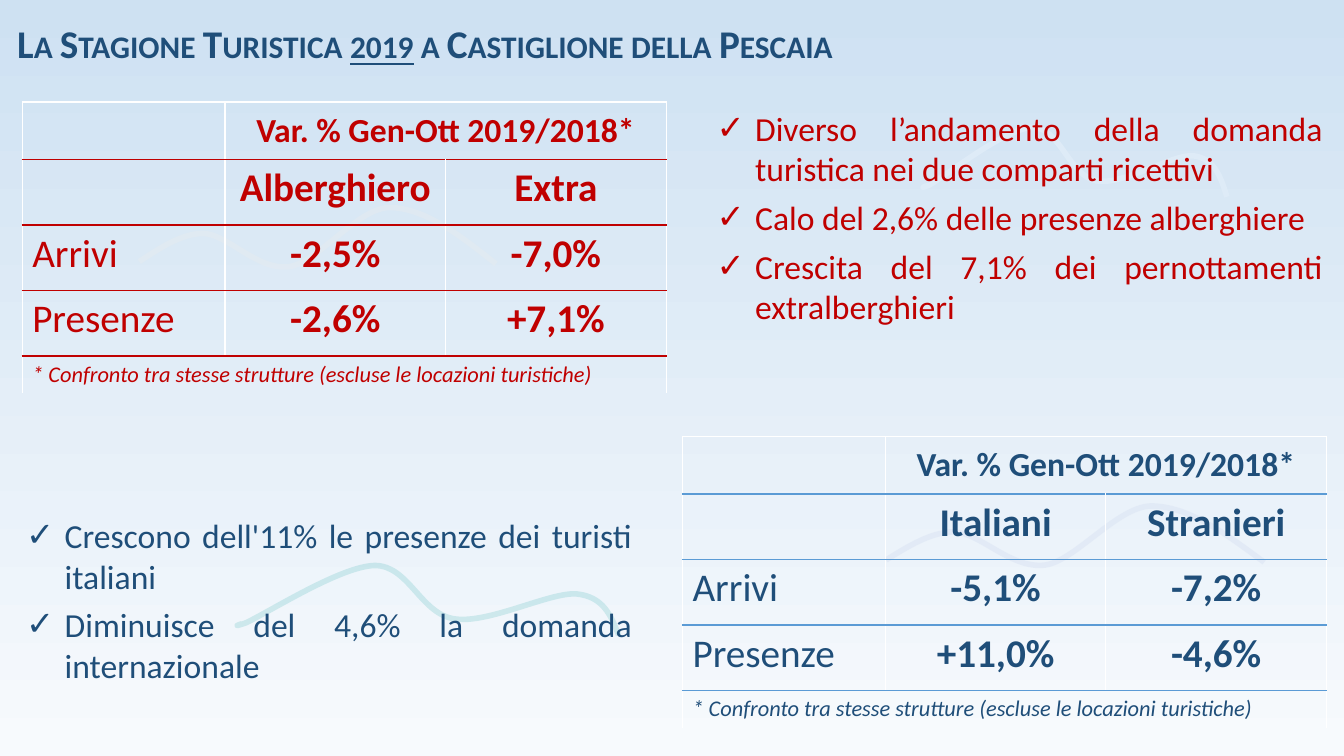
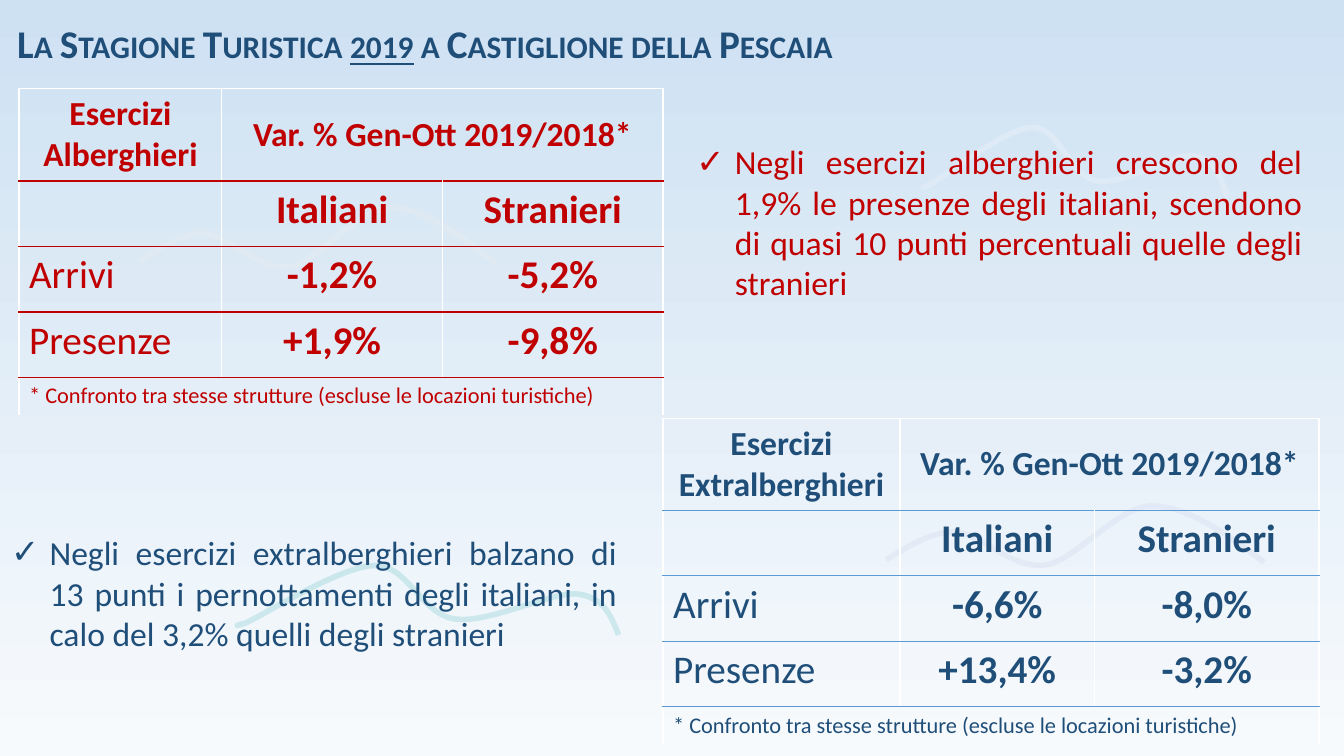
from lxml.etree import SubElement
from pptx import Presentation
from pptx.dml.color import RGBColor
from pptx.enum.text import MSO_ANCHOR, MSO_AUTO_SIZE, PP_ALIGN
from pptx.oxml.ns import qn
from pptx.oxml.xmlchemy import OxmlElement
from pptx.util import Cm, Pt

RED = RGBColor(0xC0, 0x00, 0x00)
NAVY = RGBColor(0x1F, 0x4E, 0x79)
BLUE = RGBColor(0x5B, 0x9B, 0xD5)
WHITE = RGBColor(0xFF, 0xFF, 0xFF)
SKY_TOP = RGBColor(0xCE, 0xE1, 0xF2)
SKY_BOTTOM = RGBColor(0xF7, 0xFA, 0xFD)
GREY_WAVE = RGBColor(0xED, 0xED, 0xED)
LILAC_WAVE = RGBColor(0xDA, 0xE3, 0xF3)
TEAL_WAVE = RGBColor(0x00, 0x99, 0x99)
PALE_WAVE = RGBColor(0xDE, 0xEB, 0xF7)

FONT = "Calibri"
TITLE_RUNS = ["La Stagione Turistica ", "2019", " a Castiglione della Pescaia"]
PERIOD = "Var. % Gen-Ott 2019/2018*"
FOOTNOTE = "* Confronto tra stesse strutture (escluse le locazioni turistiche)"

EQUAL_COLUMNS = (5.11, 5.56, 5.56)
WIDE_FIRST_COLUMN = (5.97, 4.9, 5.66)
BODY_ROW, FOOTNOTE_ROW = 1.65, 0.92
LIST_WIDTH, LIST_INDENT = 15.47, 0.97

# Bezier points as fractions of the wave's width and height
DOUBLE_CREST = [
    (0, 0.96), (0.06, 0.71), (0.12, 0.46), (0.18, 0.46), (0.25, 0.48),
    (0.33, 1.12), (0.42, 1.05), (0.5, 0.98), (0.61, 0.02), (0.7, 0),
    (0.8, 0), (0.9, 0.5), (1, 1)]
FALLING_CREST = [
    (0.01, 0.84), (-0.02, 0.9), (0.02, 0.83), (0.02, 0.83), (0.08, 0.68),
    (0.27, 0.01), (0.36, 0), (0.45, 0), (0.48, 0.7), (0.57, 0.77),
    (0.66, 0.84), (0.82, 0.38), (0.89, 0.41), (0.96, 0.45), (0.98, 0.72),
    (1, 1)]
WAVES = [  # outline, left, top, width, height, colour, opacity %
    (DOUBLE_CREST, 3.51, 5.23, 8.99, 1.42, GREY_WAVE, 30),
    (DOUBLE_CREST, 22.33, 12.75, 9.53, 1.42, LILAC_WAVE, 50),
    (FALLING_CREST, 5.99, 14.25, 9.6, 1.75, TEAL_WAVE, 15),
    (FALLING_CREST, 23.27, 3.21, 7.65, 1.75, PALE_WAVE, 100),
]


def style_font(font, size, color, bold=False, italic=False):
    font.name = FONT
    font.size = Pt(size)
    font.bold = bold
    font.italic = italic
    font.color.rgb = color


def curve_outline(wave):
    """Turn each three straight segments into one cubic Bezier curve."""
    outline = next(wave.element.iter(qn("a:path")))
    segments = outline.findall(qn("a:lnTo"))
    for start in range(0, len(segments), 3):
        curve = SubElement(outline, qn("a:cubicBezTo"))
        for segment in segments[start:start + 3]:
            curve.append(segment[0])
            outline.remove(segment)


def add_wave(slide, points, left, top, width, height, color, opacity):
    corners = [(Cm(left + x * width), Cm(top + y * height)) for x, y in points]
    builder = slide.shapes.build_freeform(*corners[0])
    builder.add_line_segments(corners[1:], close=False)
    wave = builder.convert_to_shape()
    curve_outline(wave)
    wave.shadow.inherit = False
    wave.fill.background()
    wave.line.color.rgb = color
    wave.line.width = Pt(4)
    color_node = next(wave.line._ln.iter(qn("a:srgbClr")))
    SubElement(color_node, qn("a:alpha"), val=str(opacity * 1000))
    return wave


def style_master(deck, slide):
    """Give the master its background and waves, drawn by way of a slide."""
    master = deck.slide_master
    fill = master.background.fill
    fill.gradient()
    fill.gradient_angle = 90
    for stop, color in zip(fill.gradient_stops, (SKY_BOTTOM, SKY_TOP)):
        stop.color.rgb = color
    for wave in WAVES:
        master.element.cSld.spTree.append(add_wave(slide, *wave).element)


def place(shape, left, top, width, height):
    shape.left, shape.top = Cm(left), Cm(top)
    shape.width, shape.height = Cm(width), Cm(height)


def style_layout_title(layout):
    title = layout.placeholders[0]
    place(title, 0.18, 0.36, 22.63, 1.45)
    title.text_frame.auto_size = MSO_AUTO_SIZE.NONE
    title.text_frame.vertical_anchor = MSO_ANCHOR.MIDDLE


def fill_title(slide):
    para = slide.shapes.title.text_frame.paragraphs[0]
    para.alignment = PP_ALIGN.LEFT
    for text in TITLE_RUNS:
        run = para.add_run()
        run.text = text
        style_font(run.font, 28, NAVY, bold=True)
        run.font.underline = text == "2019"
        run.font._element.set("cap", "small")


def fill_checklist(box, left, top, height, color, items):
    place(box, left, top, LIST_WIDTH, height)
    frame = box.text_frame
    frame.text = "\n".join(items)
    frame.auto_size = MSO_AUTO_SIZE.NONE
    frame.vertical_anchor = MSO_ANCHOR.TOP
    frame.margin_left = frame.margin_right = Cm(0.1)
    frame.margin_top = frame.margin_bottom = Cm(0.13)
    for para in frame.paragraphs:
        para.alignment = PP_ALIGN.JUSTIFY
        para.space_before, para.space_after = Pt(0), Pt(6)
        style_font(para.runs[0].font, 24, color)
        properties = para._p.get_or_add_pPr()
        properties.set("marL", str(Cm(LIST_INDENT)))
        properties.set("indent", str(-Cm(LIST_INDENT)))
        SubElement(properties, qn("a:buChar"), char="✓")


def set_borders(cell, top, bottom):
    """Draw white sides, and top and bottom in a colour or not at all."""
    properties = cell._tc.get_or_add_tcPr()
    sides = {"a:lnL": WHITE, "a:lnR": WHITE, "a:lnT": top, "a:lnB": bottom}
    for position, (tag, color) in enumerate(sides.items()):
        line = OxmlElement(tag)
        line.set("w", str(Pt(1)))
        if color is None:
            SubElement(line, qn("a:noFill"))
        else:
            solid = SubElement(line, qn("a:solidFill"))
            SubElement(solid, qn("a:srgbClr"), val=str(color))
        properties.insert(position, line)


def fill_cell(cell, text, size, color, bold, italic, alignment):
    cell.text = text
    para = cell.text_frame.paragraphs[0]
    para.alignment = alignment
    for run in para.runs:
        style_font(run.font, size, color, bold, italic)


def add_variation_table(slide, left, top, columns, first_row, color, rule,
                        corner, headings, arrivals, nights, italic_note):
    texts = [
        [corner, PERIOD, ""],
        ["", *headings],
        ["Arrivi", *arrivals],
        ["Presenze", *nights],
        [FOOTNOTE, "", ""],
    ]
    heights = [first_row, BODY_ROW, BODY_ROW, BODY_ROW, FOOTNOTE_ROW]
    sizes = [24, 28, 28, 28, 16]
    last = len(texts) - 1
    table = slide.shapes.add_table(
        len(texts), len(columns), Cm(left), Cm(top),
        Cm(sum(columns)), Cm(sum(heights))).table
    table.first_row = table.horz_banding = False
    for column, width in zip(table.columns, columns):
        column.width = Cm(width)
    for index, row in enumerate(table.rows):
        row.height = Cm(heights[index])
        for position, cell in enumerate(row.cells):
            is_label = index > 1 and position == 0
            fill_cell(cell, texts[index][position], sizes[index], color,
                      bold=not is_label,
                      italic=italic_note and index == last,
                      alignment=PP_ALIGN.LEFT if is_label else PP_ALIGN.CENTER)
            if index == 0:
                cell.vertical_anchor = MSO_ANCHOR.MIDDLE
            cell.fill.background()
            set_borders(cell, WHITE if index == 0 else rule,
                        None if index == last else rule)
    table.cell(0, 1).merge(table.cell(0, 2))
    table.cell(last, 0).merge(table.cell(last, 2))


def fill_sector_slide(slide):
    """Hotels against other lodgings, then Italians against foreigners."""
    upper, lower = slide.placeholders[1], slide.placeholders[2]
    add_variation_table(
        slide, 0.56, 2.57, EQUAL_COLUMNS, 1.45, RED, RED, "",
        ("Alberghiero", "Extra"), ("-2,5%", "-7,0%"), ("-2,6%", "+7,1%"),
        italic_note=True)
    fill_checklist(upper, 17.96, 2.59, 5.82, RED, [
        "Diverso l’andamento della domanda turistica nei due comparti ricettivi",
        "Calo del 2,6% delle presenze alberghiere",
        "Crescita del 7,1% dei pernottamenti extralberghieri"])
    add_variation_table(
        slide, 17.2, 11, EQUAL_COLUMNS, 1.45, NAVY, BLUE, "",
        ("Italiani", "Stranieri"), ("-5,1%", "-7,2%"), ("+11,0%", "-4,6%"),
        italic_note=True)
    fill_checklist(lower, 0.56, 12.85, 4.57, NAVY, [
        "Crescono dell'11% le presenze dei turisti italiani",
        "Diminuisce del 4,6% la domanda internazionale"])


def fill_origin_slide(slide):
    """Italians against foreigners within each kind of lodging."""
    upper, lower = slide.placeholders[1], slide.placeholders[2]
    add_variation_table(
        slide, 0.48, 2.24, EQUAL_COLUMNS, 2.29, RED, RED,
        "Esercizi Alberghieri", ("Italiani", "Stranieri"),
        ("-1,2%", "-5,2%"), ("+1,9%", "-9,8%"), italic_note=False)
    fill_checklist(upper, 17.45, 3.43, 4.37, RED, [
        "Negli esercizi alberghieri crescono del 1,9% le presenze degli "
        "italiani, scendono di quasi 10 punti percentuali quelle degli "
        "stranieri"])
    add_variation_table(
        slide, 16.71, 10.54, WIDE_FIRST_COLUMN, 2.29, NAVY, BLUE,
        "Esercizi Extralberghieri", ("Italiani", "Stranieri"),
        ("-6,6%", "-8,0%"), ("+13,4%", "-3,2%"), italic_note=False)
    fill_checklist(lower, 0.18, 13.28, 3.33, NAVY, [
        "Negli esercizi extralberghieri balzano di 13 punti i pernottamenti "
        "degli italiani, in calo del 3,2% quelli degli stranieri"])


def main():
    deck = Presentation()
    deck.slide_width, deck.slide_height = Cm(33.87), Cm(19.05)
    layout = deck.slide_layouts.get_by_name("Two Content")
    style_layout_title(layout)
    slides = [deck.slides.add_slide(layout) for _ in range(2)]
    style_master(deck, slides[0])
    for slide, fill_content in zip(slides, (fill_sector_slide, fill_origin_slide)):
        fill_title(slide)
        fill_content(slide)
    deck.save("out.pptx")


if __name__ == "__main__":
    main()
